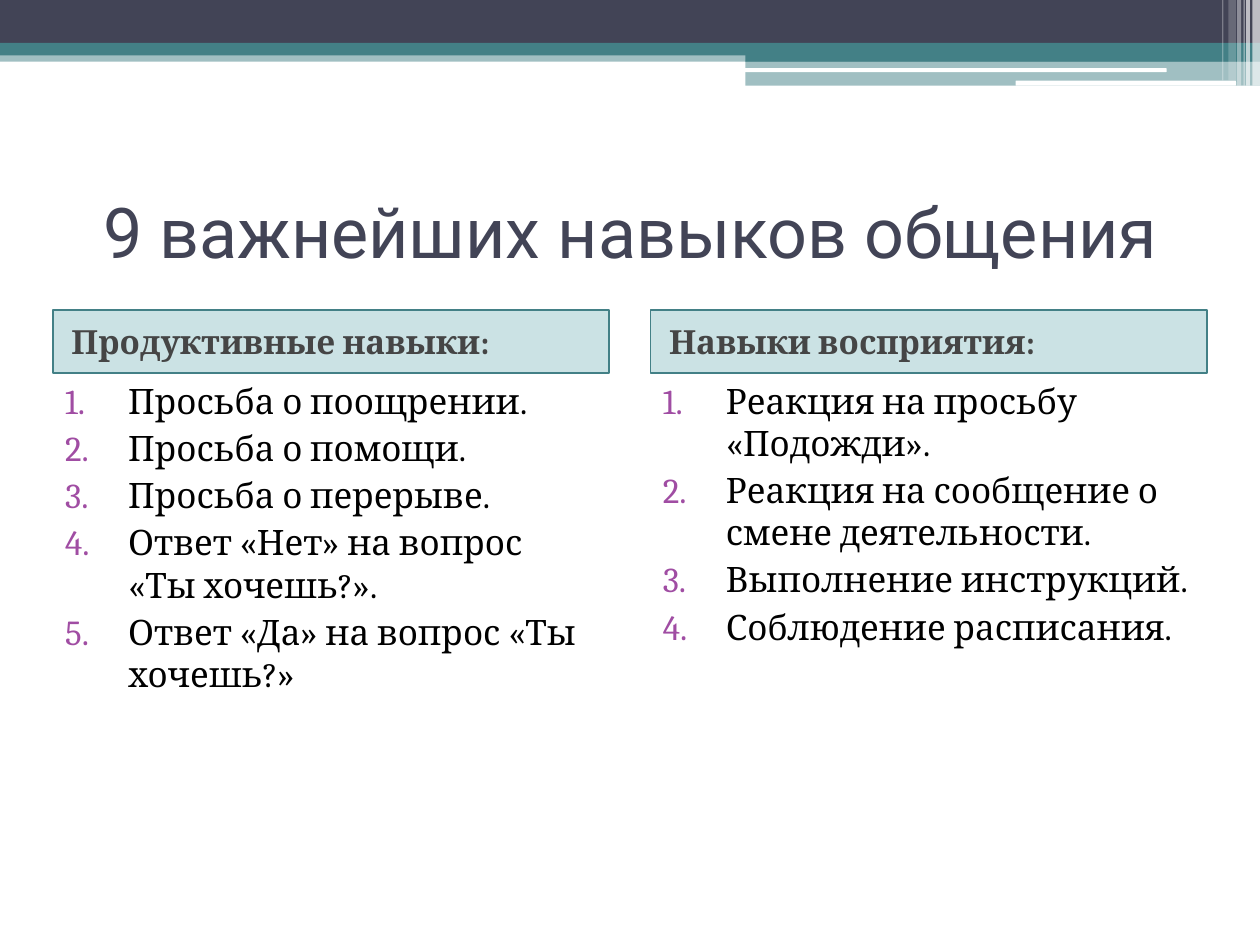
from lxml import etree
from pptx import Presentation
from pptx.dml.color import RGBColor
from pptx.enum import shapes, text
from pptx.oxml.ns import qn
from pptx.util import Pt

NAVY, TEAL, WHITE = "424456", "438086", "FFFFFF"
TITLE = "9 важнейших навыков общения"
LISTS = [
    ("Продуктивные навыки:", [
        "Просьба о поощрении.",
        "Просьба о помощи.",
        "Просьба о перерыве.",
        "Ответ «Нет» на вопрос «Ты хочешь?».",
        "Ответ «Да» на вопрос «Ты хочешь?»",
    ]),
    ("Навыки восприятия:", [
        "Реакция на просьбу «Подожди».",
        "Реакция на сообщение о смене деятельности.",
        "Выполнение инструкций.",
        "Соблюдение расписания.",
    ]),
]
# left, top, width, height, colour, opacity in percent
BANDS = [
    (0, 28.8, 720, 6.5, TEAL, 50),
    (0, 0, 720, 24.5, NAVY, 100),
    (0, 24.5, 720, 7.2, TEAL, 100),
    (426, 28.1, 294, 7.2, TEAL, 100),
    (426, 34.6, 294, 14.4, TEAL, 50),
]
PILLS = [(425.5, 39, 241.2, 2.2), (580.3, 46.1, 126, 2.9)]
# left, width, height, opacity in percent
STRIPES = [
    (715.7, 4.3, 49, 65),
    (712.1, 2.2, 49, 65),
    (710.6, 0.72, 49, 60),
    (707, 2.2, 49, 40),
    (702, 4.3, 46, 20),
    (698.4, 0.72, 46, 30),
]
LEFT, STEP, WIDE = 30.2, 341.5, 318
HEAD, BODY, HIGH = 177.1, 213.1, 36


def paint(fmt, hue, alpha=100):
    """Set a solid colour with an opacity in percent."""
    fmt.solid()
    fmt.fore_color.rgb = RGBColor.from_string(hue)
    if alpha < 100:
        clr = fmt._xPr.find(".//" + qn("a:srgbClr"))
        etree.SubElement(clr, qn("a:alpha"), val=str(alpha * 1000))


def add_block(kind, x, y, w, h, hue, alpha=100):
    block = slide.shapes.add_shape(kind, Pt(x), Pt(y), Pt(w), Pt(h))
    block.shadow.inherit = False
    paint(block.fill, hue, alpha)
    block.line.fill.background()
    return block


def style(par, face, size, hue, bold=False):
    par.font.name, par.font.size, par.font.bold = face, Pt(size), bold
    paint(par.font.fill, hue)


def number(par, hue):
    """Give a paragraph a coloured number and a hanging indent."""
    props = par._p.get_or_add_pPr()
    props.set("marL", str(Pt(36)))
    props.set("indent", str(-Pt(36)))
    tint = etree.SubElement(props, qn("a:buClr"))
    etree.SubElement(tint, qn("a:srgbClr"), val=hue)
    etree.SubElement(props, qn("a:buFont"), typeface="Cambria")
    etree.SubElement(props, qn("a:buAutoNum"), type="arabicPeriod")


deck = Presentation()
deck.slide_width, deck.slide_height = Pt(720), Pt(540)
slide = deck.slides.add_slide(deck.slide_layouts[5])
kinds = shapes.MSO_SHAPE

for band in BANDS:
    add_block(kinds.RECTANGLE, *band)
for pill in PILLS:
    add_block(kinds.ROUNDED_RECTANGLE, *pill, WHITE)
for x, w, h, alpha in STRIPES:
    add_block(kinds.RECTANGLE, x, 0, w, h, WHITE, alpha)

title = slide.shapes.title
title.left, title.top, title.width, title.height = Pt(LEFT), Pt(90), Pt(660), Pt(84)
title.text_frame.text = TITLE
title.text_frame.vertical_anchor = text.MSO_ANCHOR.MIDDLE
title.text_frame.paragraphs[0].alignment = text.PP_ALIGN.CENTER
style(title.text_frame.paragraphs[0], "Roboto", 40, NAVY)

for col, (head, items) in enumerate(LISTS):
    x = LEFT + col * STEP
    bar = add_block(kinds.RECTANGLE, x, HEAD, WIDE, HIGH, "328E97", 25)
    paint(bar.line.fill, TEAL)
    bar.line.width = Pt(1)
    frame = bar.text_frame
    frame.text = head
    frame.vertical_anchor = text.MSO_ANCHOR.MIDDLE
    par = frame.paragraphs[0]
    par.alignment, par.space_before = text.PP_ALIGN.LEFT, Pt(3)
    par._p.get_or_add_pPr().set("marL", str(Pt(3.6)))
    style(par, "Cambria", 19, "454545", True)

    box = slide.shapes.add_textbox(Pt(x), Pt(BODY), Pt(WIDE), Pt(306))
    box.text_frame.word_wrap = True
    box.text_frame.text = "\n".join(items)
    for par in box.text_frame.paragraphs:
        par.space_before = Pt(3)
        style(par, "Cambria", 20, "000000")
        number(par, "A04DA3")

deck.save("out.pptx")
